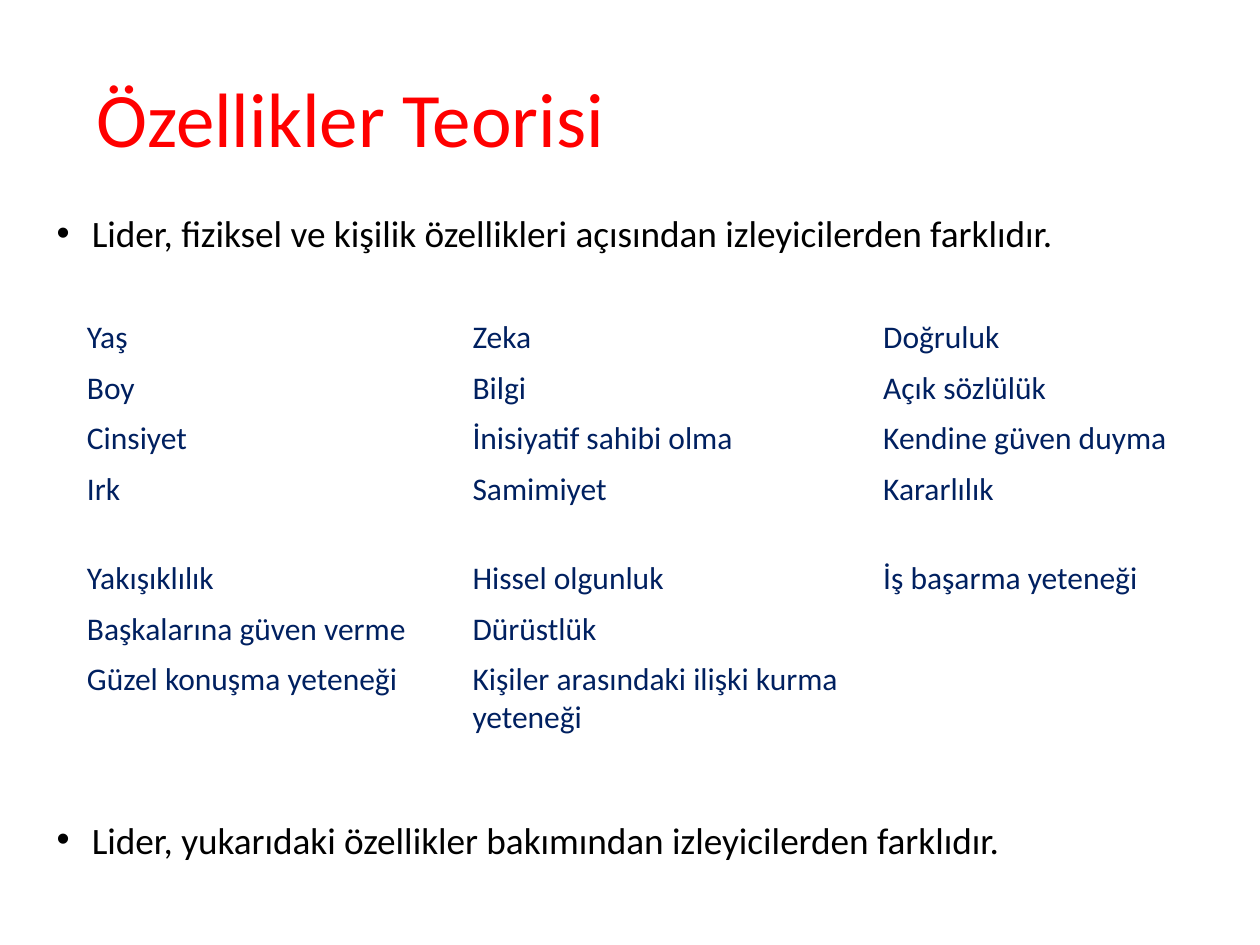
from lxml.etree import SubElement
from pptx import Presentation
from pptx.dml.color import RGBColor
from pptx.enum.text import MSO_ANCHOR, PP_ALIGN
from pptx.oxml.ns import qn
from pptx.util import Inches, Pt

TITLE = "Özellikler Teorisi"
# Statement and the space before it in points; the table sits in the gap
STATEMENTS = [
    ("Lider, fiziksel ve kişilik özellikleri açısından izleyicilerden farklıdır.", 3),
    ("Lider, yukarıdaki özellikler bakımından izleyicilerden farklıdır.", 318),
]
TRAITS = [
    ("Yaş", "Zeka", "Doğruluk"),
    ("Boy", "Bilgi", "Açık sözlülük"),
    ("Cinsiyet", "İnisiyatif sahibi olma", "Kendine güven duyma"),
    ("Irk", "Samimiyet", "Kararlılık"),
    ("Yakışıklılık", "Hissel olgunluk", "İş başarma yeteneği"),
    ("Başkalarına güven verme", "Dürüstlük", ""),
    ("Güzel konuşma yeteneği", "Kişiler arasındaki ilişki kurma yeteneği", ""),
]
COLUMN_WIDTHS = [3.06, 3.26, 2.85]
ROW_HEIGHT = 0.4
TALL_ROWS = {3: 0.71, 6: 0.71}
RED, BLACK, NAVY = "FF0000", "000000", "002060"


def add_span(para, text, size, color):
    span = para.add_run()
    span.text = text
    span.font.name = "Calibri"
    span.font.size = Pt(size)
    span.font.color.rgb = RGBColor.from_string(color)


def add_frame(page, left, top, width, height):
    box = page.shapes.add_textbox(Inches(left), Inches(top), Inches(width), Inches(height))
    box.text_frame.word_wrap = True
    return box.text_frame


def add_bullet(para, indent):
    properties = para._p.get_or_add_pPr()
    properties.set("marL", str(Inches(indent)))
    properties.set("indent", str(-Inches(indent)))
    SubElement(properties, qn("a:buFont"), typeface="Arial")
    SubElement(properties, qn("a:buChar"), char="•")


deck = Presentation()
deck.slide_width, deck.slide_height = Inches(10), Inches(7.5)
page = deck.slides.add_slide(deck.slide_layouts[6])

# Statements above and below the table
frame = add_frame(page, 0.35, 1.62, 9.45, 5.12)
for number, (text, space) in enumerate(STATEMENTS):
    para = frame.add_paragraph() if number else frame.paragraphs[0]
    para.alignment = PP_ALIGN.JUSTIFY
    para.space_before, para.space_after = Pt(space), Pt(3)
    add_bullet(para, 0.28)
    add_span(para, text, 21.3, BLACK)

# Title
frame = add_frame(page, 0.67, 0.3, 9.33, 1.25)
frame.vertical_anchor = MSO_ANCHOR.MIDDLE
add_span(frame.paragraphs[0], TITLE, 44, RED)

# Table of traits
heights = [TALL_ROWS.get(row, ROW_HEIGHT) for row in range(len(TRAITS))]
table = page.shapes.add_table(
    len(TRAITS), len(COLUMN_WIDTHS), Inches(0.59), Inches(2.48),
    Inches(sum(COLUMN_WIDTHS)), Inches(sum(heights))).table
table.first_row = table.horz_banding = False
# "No Style, No Grid" leaves the cells without borders
table._tbl.tblPr.find(qn("a:tableStyleId")).text = "{2D5ABB26-0587-4C30-8999-92F81FD0307C}"
for column, width in zip(table.columns, COLUMN_WIDTHS):
    column.width = Inches(width)
for row, height, traits in zip(table.rows, heights, TRAITS):
    row.height = Inches(height)
    for cell, trait in zip(row.cells, traits):
        cell.fill.background()
        if trait:
            add_span(cell.text_frame.paragraphs[0], trait, 18, NAVY)

deck.save("out.pptx")
